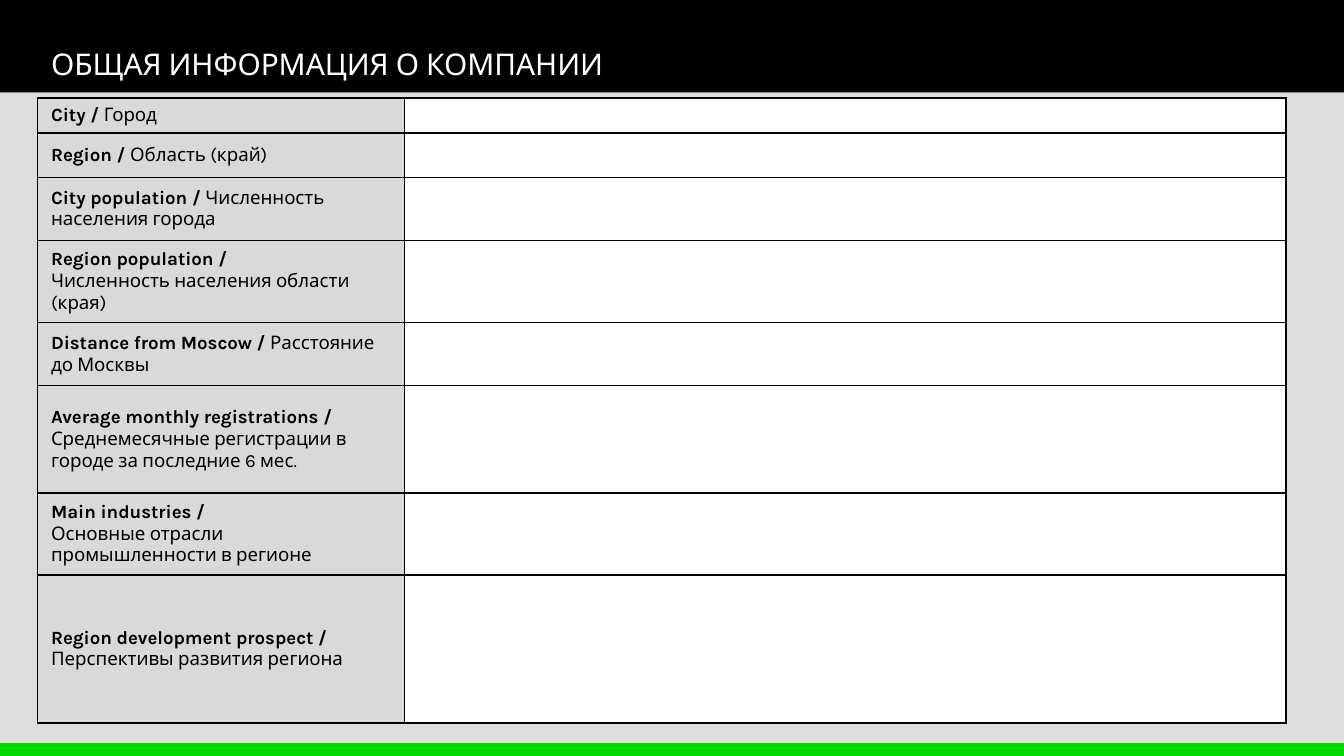
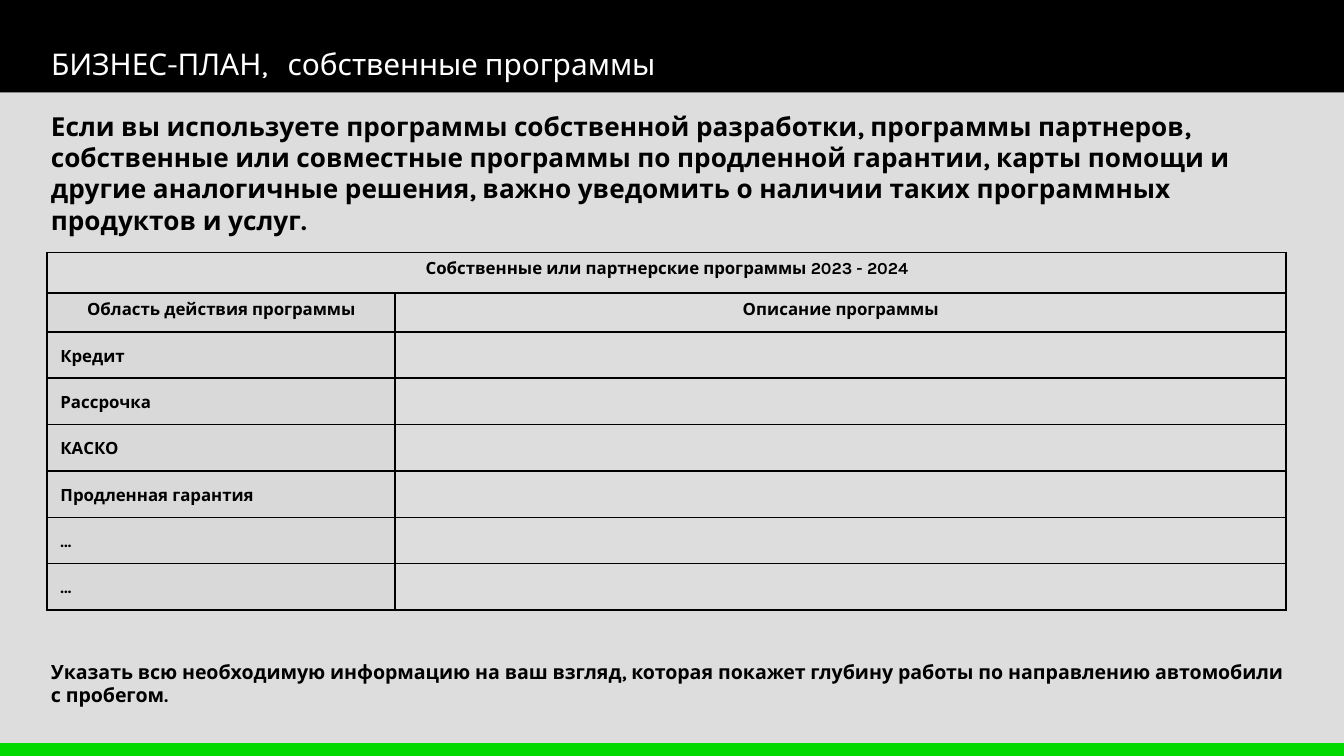
"""Build two slides of a dealer form: company facts and own programmes."""
from lxml.etree import SubElement
from pptx import Presentation
from pptx.dml.color import RGBColor as RGB
from pptx.enum.shapes import MSO_SHAPE as Shape
from pptx.enum.text import MSO_ANCHOR as Anchor, MSO_AUTO_SIZE as Fit, PP_ALIGN as Align
from pptx.oxml import parse_xml
from pptx.oxml.ns import nsdecls, qn
from pptx.util import Inches, Pt

HUES = {"black": "000000", "white": "FFFFFF", "page": "DDDDDD", "label": "D9D9D9", "green": "00D900"}
FONT = "Karla"
BANDS = [("black", 0, 0.69), ("page", 0.69, 4.94), ("green", 5.53, 0.1)]

FACTS = [
    ("City", "Город", False, 0.26),
    ("Region", "Область (край)", False, 0.33),
    ("City population", "Численность населения города", False, 0.47),
    ("Region population", "Численность населения области (края)", True, 0.61),
    ("Distance from Moscow", "Расстояние до Москвы", False, 0.47),
    ("Average monthly registrations", "Среднемесячные регистрации в городе за последние 6 мес.", False, 0.8),
    ("Main industries", "Основные отрасли промышленности в регионе", True, 0.61),
    ("Region development prospect", "Перспективы развития региона", True, 1.1),
]
PLANS = ["Кредит", "Рассрочка", "КАСКО", "Продленная гарантия", "…", "…"]
INTRO = (
    "Если вы используете программы собственной разработки, программы партнеров, "
    "собственные или совместные программы по продленной гарантии, карты помощи и "
    "другие аналогичные решения, важно уведомить о наличии таких программных продуктов и услуг."
)
NOTE = (
    "Указать всю необходимую информацию на ваш взгляд, которая покажет глубину "
    "работы по направлению автомобили с пробегом."
)


class Deck:
    """Hold the shared style and the current slide."""

    def __init__(self):
        self.show = Presentation()
        self.show.slide_width = Inches(10)
        self.show.slide_height = Inches(10) * 9 // 16
        self.slide = None

    def page(self, title, width, height, stop=None):
        """Start a slide with its title."""
        first = self.slide is None
        self.slide = self.show.slides.add_slide(self.show.slide_layouts[5])
        if first:
            self.bands()
        box = self.slide.shapes.title
        self.place(box, 0.28, 0.02, width, height)
        box.text_frame.text = title
        line = box.text_frame.paragraphs[0]
        if stop:
            tabs = SubElement(line._p.get_or_add_pPr(), qn("a:tabLst"))
            SubElement(tabs, qn("a:tab"), pos=str(Inches(stop)), algn="l")
        line.line_spacing = 2.0
        self.frame(box.text_frame)
        self.style(line, 16, "white", False)

    def bands(self):
        """Put the colour bands on the master."""
        tree = self.show.slide_master.shapes._spTree
        for spot, (hue, top, height) in enumerate(BANDS):
            band = self.slide.shapes.add_shape(
                Shape.RECTANGLE, 0, Inches(top), Inches(10), Inches(height))
            band.shadow.inherit = False
            self.paint(band.fill, hue)
            band.line.fill.background()
            band._element.nvSpPr.cNvPr.set("id", str(20 + spot))
            tree.insert(2 + spot, band._element)

    def place(self, box, left, top, width, height):
        """Set the place and size of a box."""
        box.left, box.top = Inches(left), Inches(top)
        box.width, box.height = Inches(width), Inches(height)

    def frame(self, frame):
        """Make a frame wrap, start at the top and grow."""
        frame.word_wrap = True
        frame.auto_size = Fit.SHAPE_TO_FIT_TEXT
        frame.vertical_anchor = Anchor.TOP

    def paint(self, fill, hue):
        """Fill with a named colour, or with none."""
        if hue:
            fill.solid()
            fill.fore_color.rgb = RGB.from_string(HUES[hue])
        else:
            fill.background()

    def style(self, line, size, hue="black", bold=True, align=Align.LEFT):
        """Format a paragraph and its runs."""
        line.alignment = align
        for run in line.runs:
            run.font.name, run.font.size, run.font.bold = FONT, Pt(size), bold
            run.font.color.rgb = RGB.from_string(HUES[hue])

    def text(self, words, top, height, size):
        """Add a bold text box."""
        box = self.slide.shapes.add_textbox(
            Inches(0.28), Inches(top), Inches(9.45), Inches(height))
        box.text_frame.text = words
        self.frame(box.text_frame)
        self.style(box.text_frame.paragraphs[0], size)

    def table(self, left, top, cols, rows):
        """Add a plain table with set columns and rows."""
        grid = self.slide.shapes.add_table(
            len(rows), len(cols), Inches(left), Inches(top),
            Inches(sum(cols)), Inches(sum(rows))).table
        grid.first_row = grid.horz_banding = False
        for col, width in zip(grid.columns, cols):
            col.width = Inches(width)
        for row, height in zip(grid.rows, rows):
            row.height = Inches(height)
        return grid

    def cell(self, cell, hue=None, pad=0.05, anchor=Anchor.MIDDLE):
        """Fill, pad and border a cell, with small type if empty."""
        self.paint(cell.fill, hue)
        cell.margin_top = cell.margin_bottom = Inches(pad)
        cell.vertical_anchor = anchor
        for spot, side in enumerate("LRTB"):
            cell._tc.tcPr.insert(spot, parse_xml(
                f'<a:ln{side} {nsdecls("a")} w="{Pt(1)}"><a:solidFill>'
                f'<a:srgbClr val="{HUES["black"]}"/></a:solidFill></a:ln{side}>'))
        line = cell.text_frame.paragraphs[0]
        if not line.runs:
            SubElement(line._p, qn("a:endParaRPr"), sz="900")


def facts(deck):
    """Build the company facts slide."""
    deck.page("ОБЩАЯ ИНФОРМАЦИЯ О КОМПАНИИ", 5.63, 0.56)
    grid = deck.table(0.28, 0.73, [2.73, 6.56], [fact[-1] for fact in FACTS])
    for row, (name, local, split, _) in enumerate(FACTS):
        label, value = grid.cell(row, 0), grid.cell(row, 1)
        frame = label.text_frame
        frame.text = f"{name} /" if split else f"{name} / "
        deck.style(frame.paragraphs[0], 10)
        line = frame.add_paragraph() if split else frame.paragraphs[0]
        run = line.add_run()
        run.text = local
        deck.style(line, 10)
        run.font.bold = False
        deck.cell(label, "label", 0.03)
        deck.cell(value, "white", 0.03)


def plans(deck):
    """Build the own programmes slide."""
    deck.page("БИЗНЕС-ПЛАН,\tсобственные программы", 7.56, 0.64, 1.76)
    deck.text(INTRO, 0.77, 1.04, 14)
    heights = [0.3, 0.29] + [2.07 / len(PLANS)] * len(PLANS)
    grid = deck.table(0.35, 1.88, [2.59, 6.63], heights)
    grid.cell(0, 0).merge(grid.cell(0, 1))
    heads = [
        (0, 0, "Собственные или партнерские программы 2023 - 2024", None),
        (1, 0, "Область действия программы", "label"),
        (1, 1, "Описание программы", None),
    ]
    for row, col, words, hue in heads:
        cell = grid.cell(row, col)
        cell.text_frame.text = words
        deck.style(cell.text_frame.paragraphs[0], 9, align=Align.CENTER)
        deck.cell(cell, hue, anchor=Anchor.TOP)
    deck.cell(grid.cell(0, 1))
    for row, words in enumerate(PLANS, 2):
        label = grid.cell(row, 0)
        label.text_frame.text = words
        line = label.text_frame.paragraphs[0]
        line.line_spacing = Pt(12)
        deck.style(line, 9)
        deck.cell(label, "label", 0.04)
        deck.cell(grid.cell(row, 1), pad=0.04)
    deck.text(NOTE, 4.86, 0.47, 10.5)


def main():
    """Build and save the deck."""
    deck = Deck()
    facts(deck)
    plans(deck)
    deck.show.save("out.pptx")


if __name__ == "__main__":
    main()
